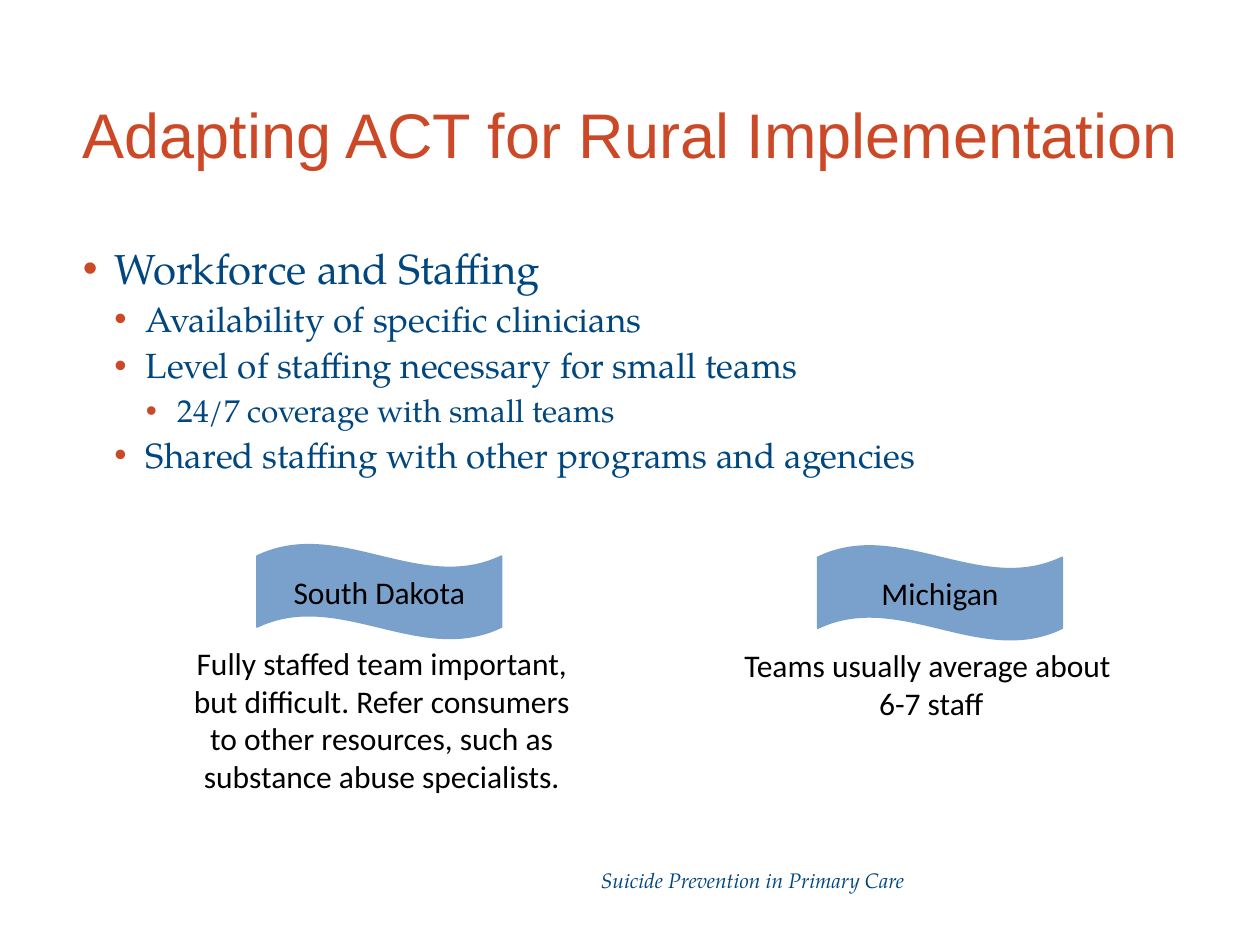
from lxml import etree
from pptx import Presentation
from pptx.dml.color import RGBColor
from pptx.enum.shapes import MSO_SHAPE
from pptx.enum.text import MSO_ANCHOR, PP_ALIGN
from pptx.oxml.ns import qn
from pptx.util import Inches, Pt

WAVE = MSO_SHAPE.WAVE
TOP, MIDDLE = MSO_ANCHOR.TOP, MSO_ANCHOR.MIDDLE
LEFT, CENTER = PP_ALIGN.LEFT, PP_ALIGN.CENTER
SERIF = "TeX Gyre Pagella"
COLORS = {"red": "CC4927", "navy": "00467F", "blue": "7AA1CC", "black": "000000"}
STEP = 0.25

POINTS = [
    (1, 24, "Workforce and Staffing"),
    (2, 20, "Availability of specific clinicians"),
    (2, 20, "Level of staffing necessary for small teams"),
    (3, 18, "24/7 coverage with small teams"),
    (2, 20, "Shared staffing with other programs and agencies"),
]
STATES = [
    (1.34, 5.06, 1.31, 0.7, 0.74, "South Dakota",
     "Fully staffed team important, but difficult. Refer consumers "
     "to other resources, such as substance abuse specialists."),
    (5.7, 5.08, 0.71, 0.79, 0.75, "Michigan",
     "Teams usually average about \n6-7 staff"),
]


def color(name):
    return RGBColor.from_string(COLORS[name])


def write(para, text, size=18, font="Calibri", tint="black", italic=False,
          align=LEFT, lead=1.0, before=0):
    para.text = text
    para.alignment = align
    para.line_spacing = lead
    para.space_before = Pt(before)
    for run in para.runs:
        run.font.size = Pt(size)
        run.font.name = font
        run.font.italic = italic
        run.font.color.rgb = color(tint)


def frame(slide, box, wrap=True, anchor=TOP):
    text = slide.shapes.add_textbox(*map(Inches, box)).text_frame
    text.word_wrap = wrap
    text.vertical_anchor = anchor
    return text


def bullet(para, level):
    props = para._p.get_or_add_pPr()
    props.set("marL", str(Inches(STEP * level)))
    props.set("indent", str(-Inches(STEP)))
    tint = etree.SubElement(props, qn("a:buClr"))
    etree.SubElement(tint, qn("a:srgbClr")).set("val", COLORS["red"])
    etree.SubElement(props, qn("a:buFont")).set("typeface", "Arial")
    etree.SubElement(props, qn("a:buChar")).set("char", "•")


def add_title(slide, box):
    text = frame(slide, box, anchor=MIDDLE)
    write(text.paragraphs[0], "Adapting ACT for Rural Implementation",
          size=36, font="Arial", tint="red", lead=0.9)


def add_points(slide, box):
    text = frame(slide, box)
    for index, (level, size, line) in enumerate(POINTS):
        para = text.add_paragraph() if index else text.paragraphs[0]
        bullet(para, level)
        write(para, line, size=size, font=SERIF, tint="navy", lead=0.9,
              before=5 if index else 0)


def add_state(slide, box, inset, rise, name, note):
    left, top = box[:2]
    wave = slide.shapes.add_shape(
        WAVE, *map(Inches, (left + inset, top - rise, 1.94, 0.75)))
    wave.shadow.inherit = False
    wave.fill.solid()
    wave.fill.fore_color.rgb = color("blue")
    wave.line.color.rgb = color("blue")
    wave.line.width = Pt(1)
    wave.text_frame.vertical_anchor = MIDDLE
    write(wave.text_frame.paragraphs[0], name, align=CENTER)
    write(frame(slide, box).paragraphs[0], note, align=CENTER)


def add_footer(slide, box):
    text = frame(slide, box, wrap=False)
    write(text.paragraphs[0], "Suicide Prevention in Primary Care",
          size=12, font=SERIF, tint="navy", italic=True)


def main():
    deck = Presentation()
    deck.slide_width, deck.slide_height = Inches(10), Inches(7.5)
    slide = deck.slides.add_slide(deck.slide_layouts[6])
    add_footer(slide, (4.67, 6.84, 2.64, 0.3))
    add_title(slide, (0.56, 0.61, 8.9, 0.97))
    add_points(slide, (0.56, 1.92, 8.9, 4.46))
    for left, top, height, inset, rise, name, note in STATES:
        add_state(slide, (left, top, 3.38, height), inset, rise, name, note)
    deck.save("out.pptx")


if __name__ == "__main__":
    main()
